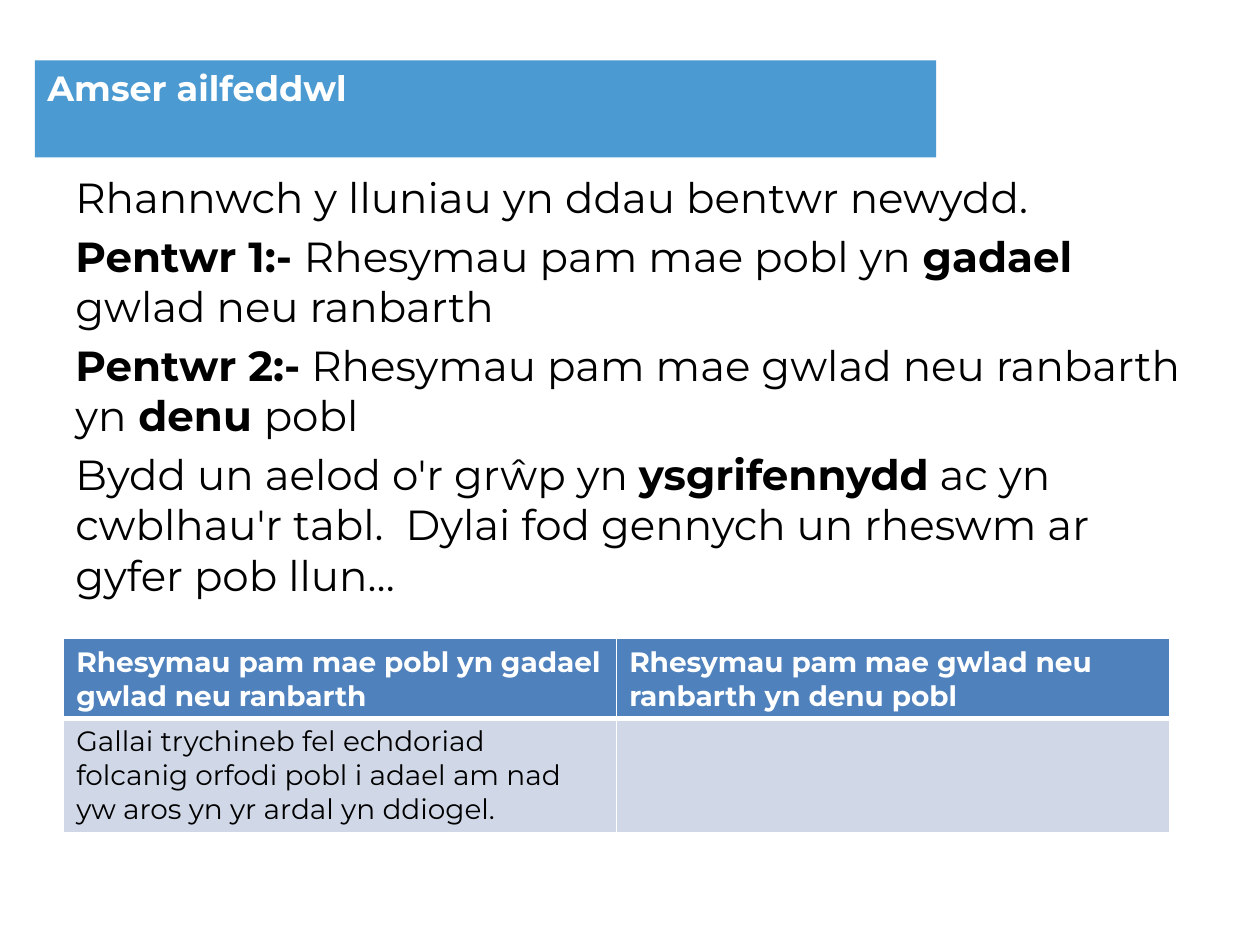
from dataclasses import dataclass

from pptx import Presentation
from pptx.dml.color import RGBColor as Rgb
from pptx.enum import shapes, text
from pptx.oxml import ns, parse_xml
from pptx.util import Pt


@dataclass(frozen=True)
class Theme:
    font: str = "Montserrat"
    white: str = "FFFFFF"
    black: str = "000000"
    blue: str = "0070C0"
    head: str = "4F81BD"
    pale: str = "D0D8E8"
    title: int = 20
    body: int = 24
    cell: int = 16


THEME = Theme()

BODY = [
    [("Rhannwch y lluniau yn ddau bentwr newydd.", False)],
    [("Pentwr 1:- ", True), ("Rhesymau pam mae pobl yn", False),
     (" gadael", True), (" gwlad neu ranbarth", False)],
    [("Pentwr 2:-", True), (" Rhesymau pam mae gwlad neu ranbarth yn", False),
     (" denu ", True), ("pobl", False)],
    [("Bydd un aelod o'r grŵp yn ", False), ("ysgrifennydd", True),
     (" ac yn cwblhau'r tabl.  Dylai fod gennych un rheswm "
      "ar gyfer pob llun…", False)],
]

ROWS = [
    ["Rhesymau pam mae pobl yn gadael gwlad neu ranbarth",
     "Rhesymau pam mae gwlad neu ranbarth yn denu pobl"],
    ["Gallai trychineb fel echdoriad folcanig orfodi pobl i adael "
     "am nad yw aros yn yr ardal yn ddiogel.", ""],
]


def style(para, size, color, bold=None):
    font = para.font
    font.name = THEME.font
    font.size = Pt(size)
    font.color.rgb = Rgb.from_string(color)
    font.bold = bold


def add_body(slide, x, y, w, h):
    frame = slide.shapes.add_textbox(Pt(x), Pt(y), Pt(w), Pt(h)).text_frame
    frame.word_wrap = True
    for i, parts in enumerate(BODY):
        para = frame.add_paragraph() if i else frame.paragraphs[0]
        para.space_before = Pt(4.8 if i else 0)
        style(para, THEME.body, THEME.black)
        for words, bold in parts:
            run = para.add_run()
            run.text = words
            run.font.bold = bold


def add_edges(cell, widths):
    props = cell._tc.get_or_add_tcPr()
    for side, width in widths.items():
        props.append(parse_xml(
            f'<a:ln{side} {ns.nsdecls("a")} w="{Pt(width)}"><a:solidFill>'
            f'<a:srgbClr val="{THEME.white}"/></a:solidFill></a:ln{side}>'))


def add_grid(slide, x, y, w, heights):
    frame = slide.shapes.add_table(len(ROWS), len(ROWS[0]), Pt(x), Pt(y),
                                   Pt(w), Pt(sum(heights)))
    table = frame.table
    for r, row in enumerate(ROWS):
        table.rows[r].height = Pt(heights[r])
        top = r == 0
        for c, words in enumerate(row):
            cell = table.cell(r, c)
            cell.text = words
            style(cell.text_frame.paragraphs[0], THEME.cell,
                  THEME.white if top else THEME.black, top)
            add_edges(cell, {"L": 1, "R": 1, "T": 1 if top else 3,
                             "B": 3 if top else 1})
            cell.fill.solid()
            cell.fill.fore_color.rgb = Rgb.from_string(
                THEME.head if top else THEME.pale)


def add_title(slide, words, x, y, w, h):
    bar = slide.shapes.add_shape(shapes.MSO_SHAPE.RECTANGLE,
                                 Pt(x), Pt(y), Pt(w), Pt(h))
    bar.shadow.inherit = False
    bar.line.fill.background()
    bar.fill.solid()
    bar.fill.fore_color.rgb = Rgb.from_string(THEME.blue)
    color = bar._element.spPr.find(".//" + ns.qn("a:srgbClr"))
    color.append(parse_xml(f'<a:alpha {ns.nsdecls("a")} val="70000"/>'))
    frame = bar.text_frame
    frame.word_wrap = True
    frame.vertical_anchor = text.MSO_ANCHOR.TOP
    para = frame.paragraphs[0]
    para.text = words
    para.alignment = text.PP_ALIGN.LEFT
    style(para, THEME.title, THEME.white, True)


def main():
    deck = Presentation()
    deck.slide_width, deck.slide_height = Pt(720), Pt(540)
    slide = deck.slides.add_slide(deck.slide_layouts[6])
    add_body(slide, 36, 94.3, 648, 356.4)
    add_grid(slide, 36.4, 365, 632, [45.5, 65])
    add_title(slide, "Amser ailfeddwl", 20, 34.5, 515, 55.5)
    deck.save("out.pptx")


if __name__ == "__main__":
    main()
